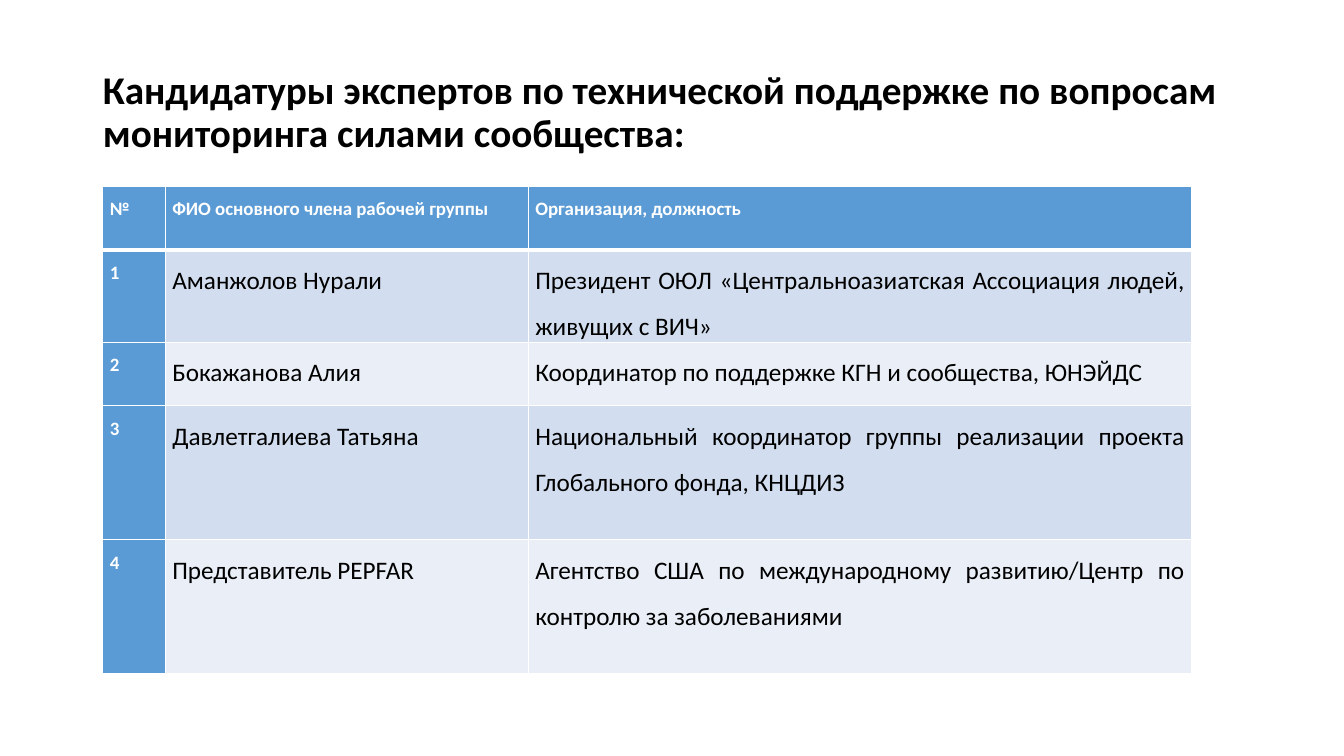
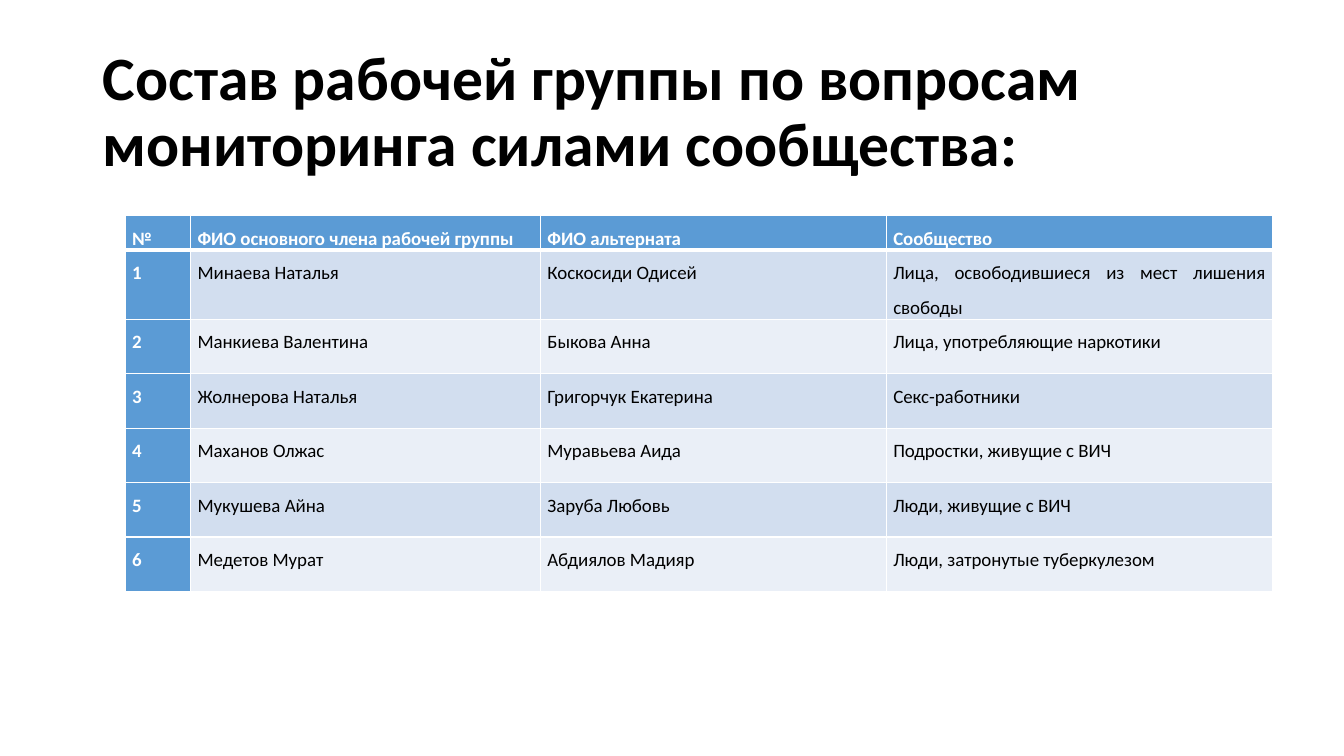
from lxml import etree
from pptx import Presentation
from pptx.dml.color import RGBColor
from pptx.enum.text import MSO_ANCHOR, MSO_AUTO_SIZE, PP_ALIGN
from pptx.oxml.ns import qn
from pptx.util import Pt

LEFT, JUSTIFY = PP_ALIGN.LEFT, PP_ALIGN.JUSTIFY
MIDDLE, NO_FIT = MSO_ANCHOR.MIDDLE, MSO_AUTO_SIZE.NONE

# Content: lengths in px, text sizes in points
SLIDES = [
    {
        "title": "Кандидатуры экспертов по технической поддержке по вопросам "
                 "мониторинга силами сообщества:",
        "title_size": 28,
        "body_size": 18,
        "origin": (102, 185),
        "columns": [62, 360, 658],
        "row_heights": [63, 63, 63, 133, 133],
        "header": ["№", "ФИО основного члена рабочей группы", "Организация, должность"],
        "members": [
            ("Аманжолов Нурали",
             "Президент ОЮЛ «Центральноазиатская Ассоциация людей, живущих с ВИЧ»"),
            ("Бокажанова Алия",
             "Координатор по поддержке КГН и сообщества, ЮНЭЙДС"),
            ("Давлетгалиева Татьяна",
             "Национальный координатор группы реализации проекта Глобального фонда, КНЦДИЗ"),
            ("Представитель PEPFAR",
             "Агентство США по международному развитию/Центр по контролю за заболеваниями"),
        ],
    },
    {
        "title": "Состав рабочей группы по вопросам мониторинга силами сообщества:",
        "title_size": 44,
        "body_size": 13.5,
        "origin": (124, 214),
        "columns": [65, 347, 343, 383],
        "row_heights": [30, 53] + [54] * 5,
        "header": ["№", "ФИО основного члена рабочей группы", "ФИО альтерната", "Сообщество"],
        "members": [
            ("Минаева Наталья", "Коскосиди Одисей",
             "Лица, освободившиеся из мест лишения свободы"),
            ("Манкиева Валентина", "Быкова Анна", "Лица, употребляющие наркотики"),
            ("Жолнерова Наталья", "Григорчук Екатерина", "Секс-работники"),
            ("Маханов Олжас", "Муравьева Аида", "Подростки, живущие с ВИЧ"),
            ("Мукушева Айна", "Заруба Любовь", "Люди, живущие с ВИЧ"),
            ("Медетов Мурат", "Абдиялов Мадияр", "Люди, затронутые туберкулезом"),
        ],
    },
]

# Shared style
EMU_PER_PX = 9144
SLIDE_SIZE = (1333, 750)
TITLE_BOX = (92, 40, 1150, 145)
TITLE_ONLY = 5
FONT = "Calibri"
BLACK, WHITE, BLUE = "000000", "FFFFFF", "5B9BD5"
BANDS = ("D2DEEF", "EAEFF7")
LABEL_SIZE = 13.5
CELL_MARGIN = 7
THIN, THICK = 1, 3


def px(length):
    return length * EMU_PER_PX


def rgb(color):
    return RGBColor.from_string(color)


def style_paragraph(paragraph, size, color, bold, align, spacing):
    paragraph.alignment = align
    paragraph.line_spacing = spacing
    font = paragraph.font
    font.name, font.size, font.bold = FONT, Pt(size), bold
    font.color.rgb = rgb(color)


def add_border(cell, side, width):
    line = etree.SubElement(cell._tc.get_or_add_tcPr(), qn(f"a:ln{side}"), w=str(Pt(width)))
    fill = etree.SubElement(line, qn("a:solidFill"))
    etree.SubElement(fill, qn("a:srgbClr"), val=WHITE)


def fill_cell(cell, text, row, column, body_size):
    is_label = row == 0 or column == 0
    cell.text = text
    cell.margin_left = cell.margin_right = px(CELL_MARGIN)
    cell.margin_top = cell.margin_bottom = 0
    style_paragraph(cell.text_frame.paragraphs[0],
                    LABEL_SIZE if is_label else body_size,
                    WHITE if is_label else BLACK, is_label, JUSTIFY, 1.5)
    # The rule under the header is thicker than the rest of the grid
    for side in "LRTB":
        under_header = (row, side) in ((0, "B"), (1, "T"))
        add_border(cell, side, THICK if under_header else THIN)
    cell.fill.solid()
    cell.fill.fore_color.rgb = rgb(BLUE if is_label else BANDS[(row - 1) % 2])


def add_title(slide, text, size):
    title = slide.shapes.title
    title.left, title.top, title.width, title.height = map(px, TITLE_BOX)
    frame = title.text_frame
    frame.text = text
    frame.word_wrap, frame.auto_size, frame.vertical_anchor = True, NO_FIT, MIDDLE
    style_paragraph(frame.paragraphs[0], size, BLACK, True, LEFT, 0.9)


def add_members(slide, content):
    columns, heights = content["columns"], content["row_heights"]
    left, top = content["origin"]
    table = slide.shapes.add_table(len(heights), len(columns), px(left), px(top),
                                   px(sum(columns)), px(sum(heights))).table
    table.first_col = True
    for column, width in zip(table.columns, columns):
        column.width = px(width)
    for row, height in zip(table.rows, heights):
        row.height = px(height)

    numbered = [(str(n), *member) for n, member in enumerate(content["members"], 1)]
    for r, texts in enumerate([content["header"], *numbered]):
        for c, text in enumerate(texts):
            fill_cell(table.cell(r, c), text, r, c, content["body_size"])


def main():
    deck = Presentation()
    deck.slide_width, deck.slide_height = map(px, SLIDE_SIZE)
    for content in SLIDES:
        slide = deck.slides.add_slide(deck.slide_layouts[TITLE_ONLY])
        add_title(slide, content["title"], content["title_size"])
        add_members(slide, content)
    deck.save("out.pptx")


if __name__ == "__main__":
    main()
